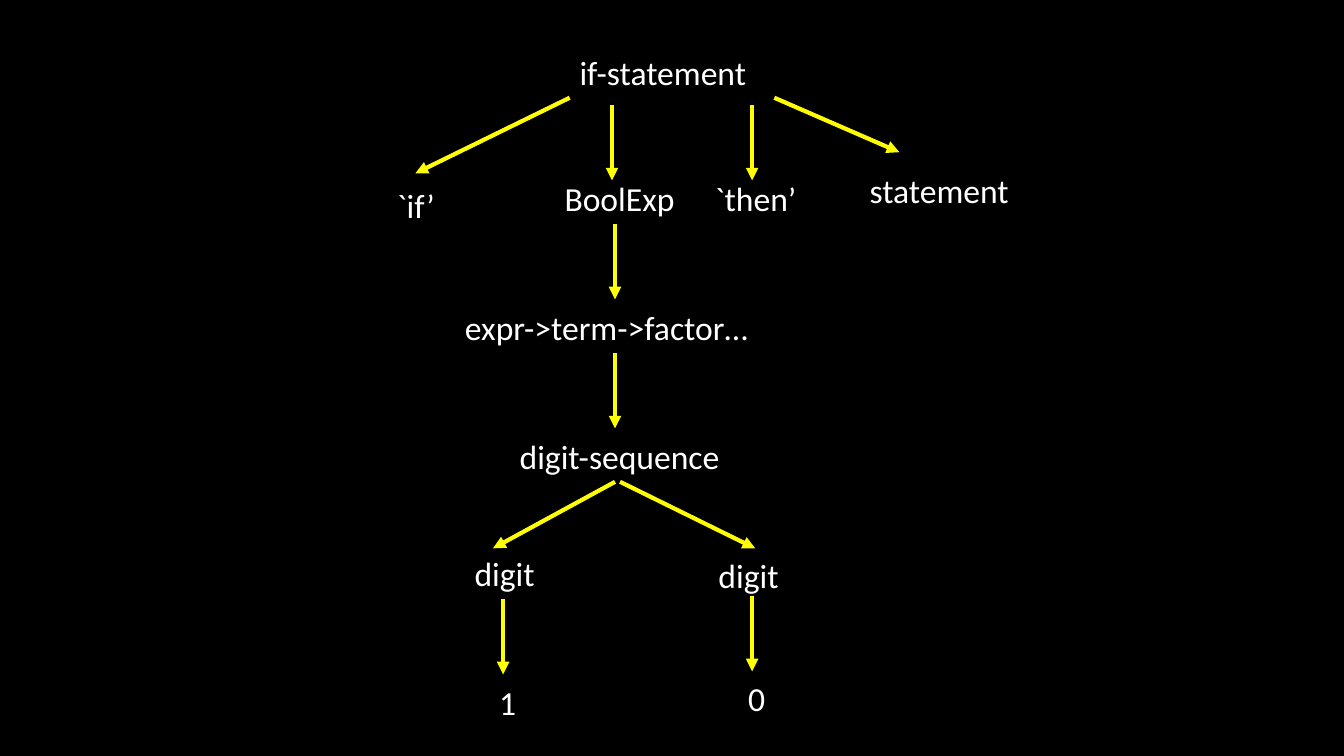
from pptx import Presentation
from pptx.dml.color import RGBColor
from pptx.enum.shapes import MSO_CONNECTOR
from pptx.enum.text import MSO_AUTO_SIZE, PP_ALIGN
from pptx.oxml.ns import qn
from pptx.util import Inches, Pt
from lxml.etree import SubElement


def color(hex_code):
    return RGBColor.from_string(hex_code)


class TreeSlide:
    font_name = "Calibri"
    font_size = 24
    background = "000000"
    text_color = "FFFFFF"
    arrow_color = "FFFF00"
    arrow_width = 3
    node_height = 0.5

    def __init__(self, deck):
        self.slide = deck.slides.add_slide(deck.slide_layouts[6])
        fill = self.slide.background.fill
        fill.solid()
        fill.fore_color.rgb = color(self.background)

    def node(self, label, left, top, width=2.03, align=PP_ALIGN.CENTER):
        box = self.slide.shapes.add_textbox(
            Inches(left), Inches(top), Inches(width), Inches(self.node_height))
        frame = box.text_frame
        frame.word_wrap = True
        frame.auto_size = MSO_AUTO_SIZE.SHAPE_TO_FIT_TEXT
        paragraph = frame.paragraphs[0]
        paragraph.text = label
        paragraph.alignment = align
        paragraph.font.name = self.font_name
        paragraph.font.size = Pt(self.font_size)
        paragraph.font.color.rgb = color(self.text_color)

    def arrow(self, x1, y1, x2, y2):
        branch = self.slide.shapes.add_connector(
            MSO_CONNECTOR.STRAIGHT, Inches(x1), Inches(y1), Inches(x2), Inches(y2))
        branch.line.color.rgb = color(self.arrow_color)
        branch.line.width = Pt(self.arrow_width)
        SubElement(branch.line._get_or_add_ln(), qn("a:tailEnd"), type="triangle")
        SubElement(branch._element.spPr, qn("a:effectLst"))

    def down_arrow(self, x, top, length=0.75):
        self.arrow(x, top, x, top + length)


def main():
    deck = Presentation()
    deck.slide_width = Inches(13.33)
    deck.slide_height = Inches(7.5)
    tree = TreeSlide(deck)

    tree.node("if-statement", 5.65, 0.47, align=PP_ALIGN.LEFT)
    for label, left, top in [
        ("`if’", 3.11, 1.79),
        ("BoolExp", 5.13, 1.72),
        ("`then’", 6.48, 1.72),
        ("statement", 8.3, 1.64),
        ("digit", 3.99, 5.44),
        ("digit", 6.41, 5.46),
    ]:
        tree.node(label, left, top)

    for label, left, top, width in [
        ("expr->term->factor…", 4.35, 3, 3.33),
        ("digit-sequence", 4.87, 4.28, 2.55),
        ("1", 3.76, 6.72, 2.55),
        ("0", 6.23, 6.68, 2.55),
    ]:
        tree.node(label, left, top, width)

    for slanted_branch in [
        (5.65, 0.97, 4.12, 1.72),
        (7.68, 0.97, 8.92, 1.51),
        (6.1, 4.78, 4.89, 5.44),
        (6.15, 4.78, 7.49, 5.44),
    ]:
        tree.arrow(*slanted_branch)

    for x, top in [(6.07, 1.04), (7.46, 1.04), (6.1, 2.22),
                   (6.1, 3.5), (4.99, 5.94), (7.46, 5.91)]:
        tree.down_arrow(x, top)

    deck.save("out.pptx")


if __name__ == "__main__":
    main()
